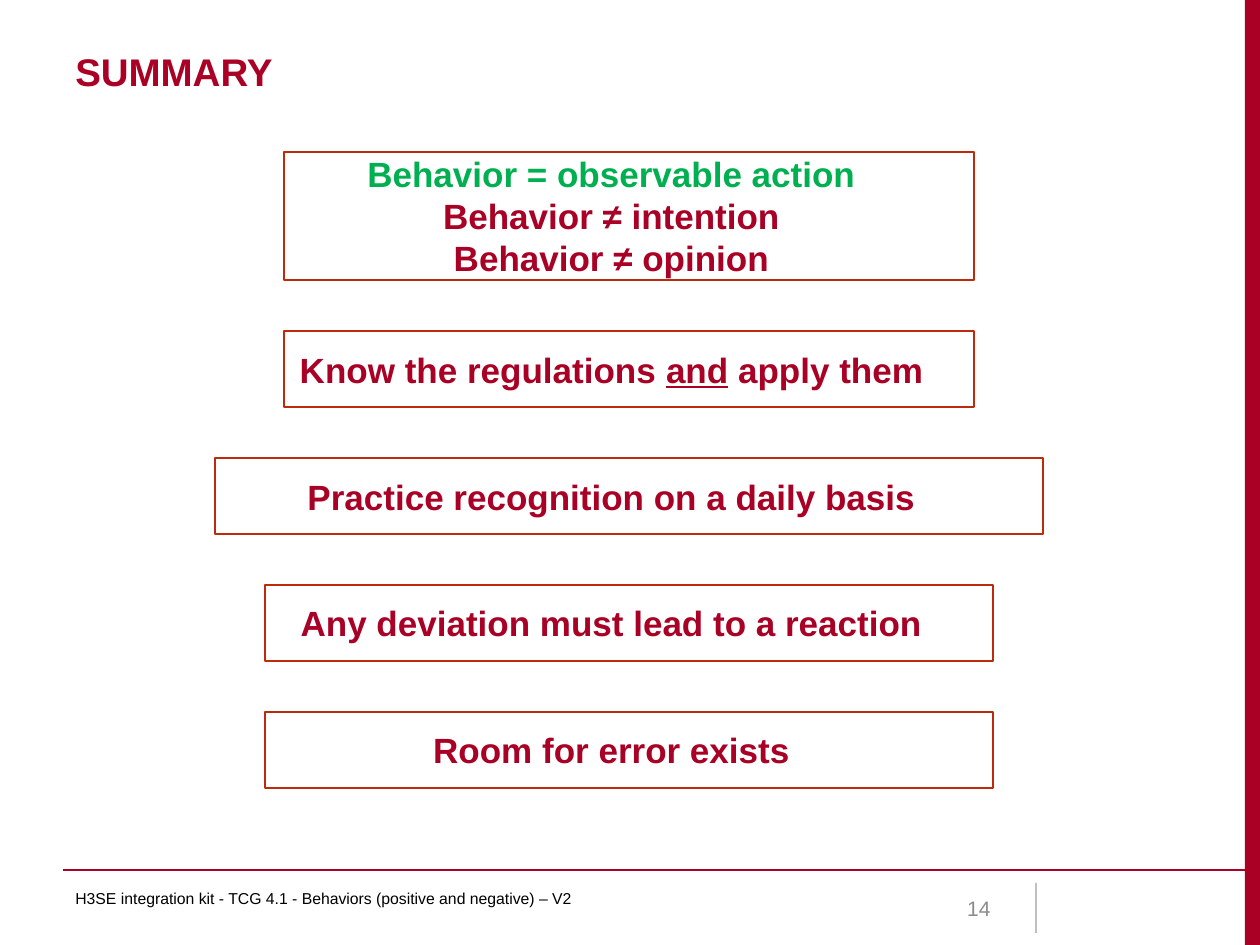
from lxml.etree import SubElement
from pptx import Presentation
from pptx.dml.color import RGBColor
from pptx.enum.shapes import MSO_CONNECTOR as Connector, MSO_SHAPE as Shape
from pptx.enum.text import MSO_ANCHOR as Anchor, PP_ALIGN as Align
from pptx.oxml.ns import qn
from pptx.util import Emu, Pt

COLORS = {
    "brand": "AA0025",
    "text": "A90025",
    "border": "BD2B0B",
    "positive": "00B050",
    "number": "8C8C8C",
    "black": "000000",
    "white": "FFFFFF",
}
PX_PER_INCH = 126
PAGE_WIDTH, PAGE_HEIGHT = 1260, 945
BOX_CENTER, BOX_TOP, BOX_GAP = 629, 152, 51
FOOTER_TOP, FOOTER_HEIGHT = 883, 50

MESSAGES = [
    (690, 128, [
        [("Behavior = observable action", "positive", False)],
        [("Behavior ≠ intention", "text", False)],
        [("Behavior ≠ opinion", "text", False)],
    ]),
    (690, 76, [[
        ("Know the regulations ", "text", False),
        ("and", "text", True),
        (" apply them", "text", False),
    ]]),
    (828, 76, [[("Practice recognition on a daily basis", "text", False)]]),
    (728, 76, [[("Any deviation must lead to a reaction", "text", False)]]),
    (728, 76, [[("Room for error exists", "text", False)]]),
]


def px(value):
    return Emu(round(value * 914400 / PX_PER_INCH))


def color(name):
    return RGBColor.from_string(COLORS[name])


def style_font(font, size, color_name, bold=False):
    font.name = "Arial"
    font.size = Pt(size)
    font.bold = bold
    font.color.rgb = color(color_name)


def add_rectangle(page, left, top, width, height, fill, border=None):
    box = page.shapes.add_shape(
        Shape.RECTANGLE, px(left), px(top), px(width), px(height))
    box.shadow.inherit = False
    box.fill.solid()
    box.fill.fore_color.rgb = color(fill)
    if border:
        box.line.color.rgb = color(border)
        box.line.width = Pt(1.5)
    else:
        box.line.fill.background()
    return box


def add_rule(page, start, end, color_name, width, opacity=100):
    rule = page.shapes.add_connector(
        Connector.STRAIGHT, *(px(value) for value in start + end))
    rule.line.color.rgb = color(color_name)
    rule.line.width = Pt(width)
    properties = rule._element.spPr
    SubElement(properties, qn("a:effectLst"))
    if opacity < 100:
        tint = properties.find(".//" + qn("a:srgbClr"))
        SubElement(tint, qn("a:alpha")).set("val", str(opacity * 1000))


def add_text(page, left, top, width, height, text, size, color_name,
             bold=False, align=Align.LEFT, anchor=Anchor.TOP):
    box = page.shapes.add_textbox(px(left), px(top), px(width), px(height))
    frame = box.text_frame
    frame.word_wrap = True
    frame.vertical_anchor = anchor
    frame.text = text
    para = frame.paragraphs[0]
    para.alignment = align
    style_font(para.runs[0].font, size, color_name, bold)
    return box


def add_message(page, top, width, height, lines):
    box = add_rectangle(page, BOX_CENTER - width / 2, top, width, height,
                        "white", "border")
    frame = box.text_frame
    frame.word_wrap = True
    frame.vertical_anchor = Anchor.MIDDLE
    frame.margin_left = frame.margin_top = frame.margin_bottom = 0
    frame.margin_right = px(35)
    for index, line in enumerate(lines):
        para = frame.add_paragraph() if index else frame.paragraphs[0]
        para.alignment = Align.CENTER
        for text, color_name, underlined in line:
            span = para.add_run()
            span.text = text
            style_font(span.font, 20, color_name, bold=True)
            span.font.underline = underlined


def main():
    deck = Presentation()
    deck.slide_width, deck.slide_height = px(PAGE_WIDTH), px(PAGE_HEIGHT)
    page = deck.slides.add_slide(deck.slide_layouts[6])

    add_rectangle(page, 1245, 0, 15, PAGE_HEIGHT, "brand")
    add_rule(page, (63, 870), (PAGE_WIDTH, 870), "brand", 0.75)
    add_rule(page, (1036, FOOTER_TOP), (1036, FOOTER_TOP + FOOTER_HEIGHT),
             "black", 0.5, opacity=70)

    title = add_text(page, 63, 38, 1133, 87, "SUMMARY", 22, "brand", bold=True)
    title.text_frame.margin_top = px(10)

    top = BOX_TOP
    for width, height, lines in MESSAGES:
        add_message(page, top, width, height, lines)
        top += height + BOX_GAP

    add_text(page, 63, FOOTER_TOP, 766, FOOTER_HEIGHT,
             "H3SE integration kit - TCG 4.1 - Behaviors (positive and negative) – V2",
             9, "black")
    add_text(page, 903, FOOTER_TOP, 100, FOOTER_HEIGHT, "14", 12, "number",
             align=Align.RIGHT, anchor=Anchor.MIDDLE)
    deck.save("out.pptx")


if __name__ == "__main__":
    main()
